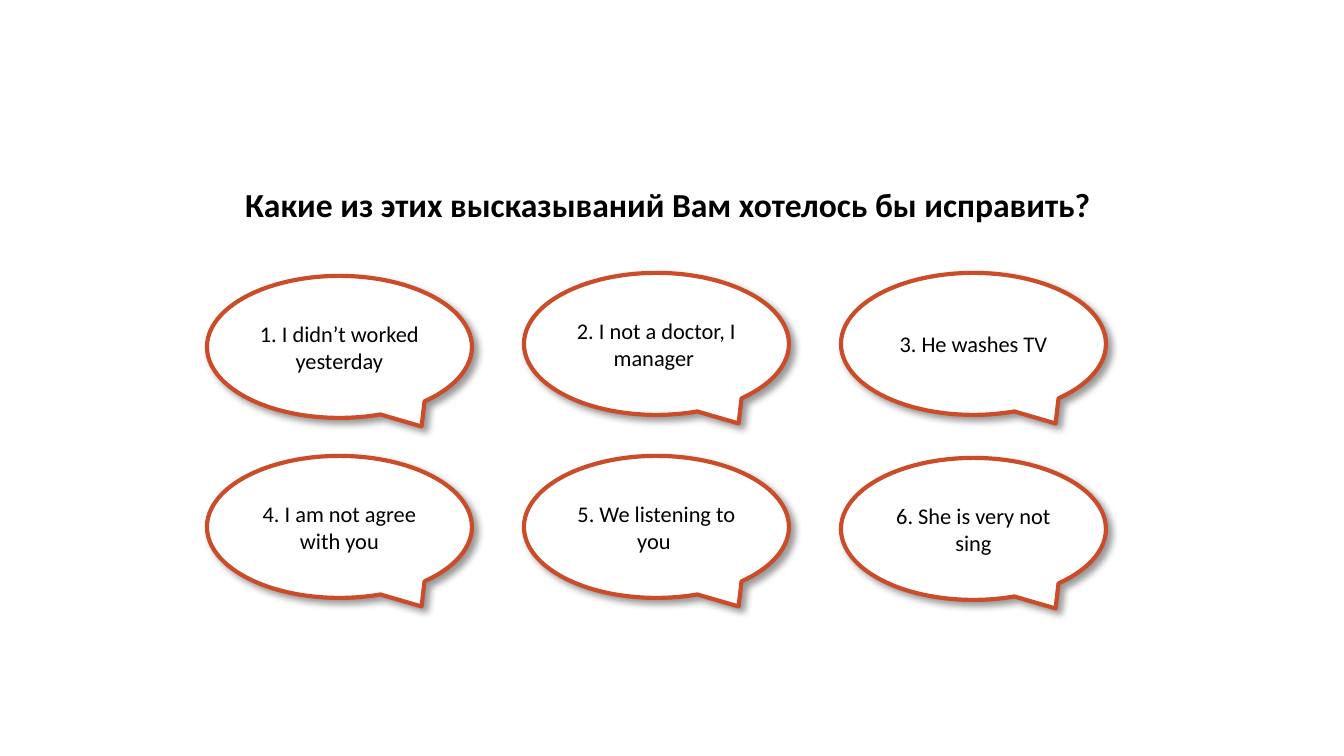
"""Build a slide with six speech bubbles holding English sentences to correct."""
from lxml import etree
from pptx import Presentation
from pptx.dml.color import RGBColor
from pptx.enum.shapes import MSO_SHAPE
from pptx.enum.text import MSO_ANCHOR, MSO_AUTO_SIZE, PP_ALIGN
from pptx.oxml import parse_xml
from pptx.util import Pt

CALLOUT = MSO_SHAPE.OVAL_CALLOUT
TOP, MIDDLE = MSO_ANCHOR.TOP, MSO_ANCHOR.MIDDLE
CENTER = PP_ALIGN.CENTER
FIT_SHAPE = MSO_AUTO_SIZE.SHAPE_TO_FIT_TEXT

TITLE = "Какие из этих высказываний Вам хотелось бы исправить? "
BUBBLES = [
    ("1. I didn’t worked yesterday", 276),
    ("2. I not a doctor, I manager ", 273),
    ("3. He washes TV", 273),
    ("4. I am not agree with you", 456),
    ("5. We listening to you ", 456),
    ("6. She is very not sing", 458),
]

BLACK = RGBColor(0x00, 0x00, 0x00)
WHITE = RGBColor(0xFF, 0xFF, 0xFF)
RUST = RGBColor(0xCA, 0x4C, 0x29)
FONT = "Calibri"

SLIDE_W, SLIDE_H = 1344, 756
COLUMNS, LEFT, STEP = 3, 207, 317
BUBBLE_W, BUBBLE_H = 265, 142
TAIL = (0.31, 0.56)
SHADOW = (
    '<a:effectLst xmlns:a="http://schemas.openxmlformats.org/drawingml/2006/main">'
    f'<a:outerShdw blurRad="{Pt(4)}" dist="{Pt(3)}" dir="2700000" algn="tl" rotWithShape="0">'
    '<a:srgbClr val="000000"><a:alpha val="40000"/></a:srgbClr>'
    '</a:outerShdw></a:effectLst>'
)


def px(n):
    return round(n * 914400 / 134.4)


def write(tf, text, size, anchor, bold=False):
    tf.word_wrap = True
    tf.vertical_anchor = anchor
    p = tf.paragraphs[0]
    p.alignment = CENTER
    r = p.add_run()
    r.text = text
    r.font.name = FONT
    r.font.size = Pt(size)
    r.font.bold = bold
    r.font.color.rgb = BLACK


def add_bubble(s, text, left, top):
    sp = s.shapes.add_shape(CALLOUT, px(left), px(top), px(BUBBLE_W), px(BUBBLE_H))
    sp.adjustments[0], sp.adjustments[1] = TAIL
    sp.fill.solid()
    sp.fill.fore_color.rgb = WHITE
    sp.line.color.rgb = RUST
    sp.line.width = Pt(2.25)
    sp.shadow.inherit = False
    effects = sp._element.spPr.find("{*}effectLst")
    effects.getparent().replace(effects, parse_xml(etree.fromstring(SHADOW) is not None and SHADOW))
    write(sp.text_frame, text, 12, MIDDLE)


def main():
    prs = Presentation()
    prs.slide_width, prs.slide_height = px(SLIDE_W), px(SLIDE_H)
    s = prs.slides.add_slide(prs.slide_layouts[5])

    title = s.shapes.title
    title.left, title.top, title.width, title.height = px(0), px(177), px(SLIDE_W), px(54)
    write(title.text_frame, TITLE, 18, TOP, bold=True)
    title.text_frame.auto_size = FIT_SHAPE

    for i, (text, top) in enumerate(BUBBLES):
        add_bubble(s, text, LEFT + i % COLUMNS * STEP, top)

    prs.save("out.pptx")


if __name__ == "__main__":
    main()
